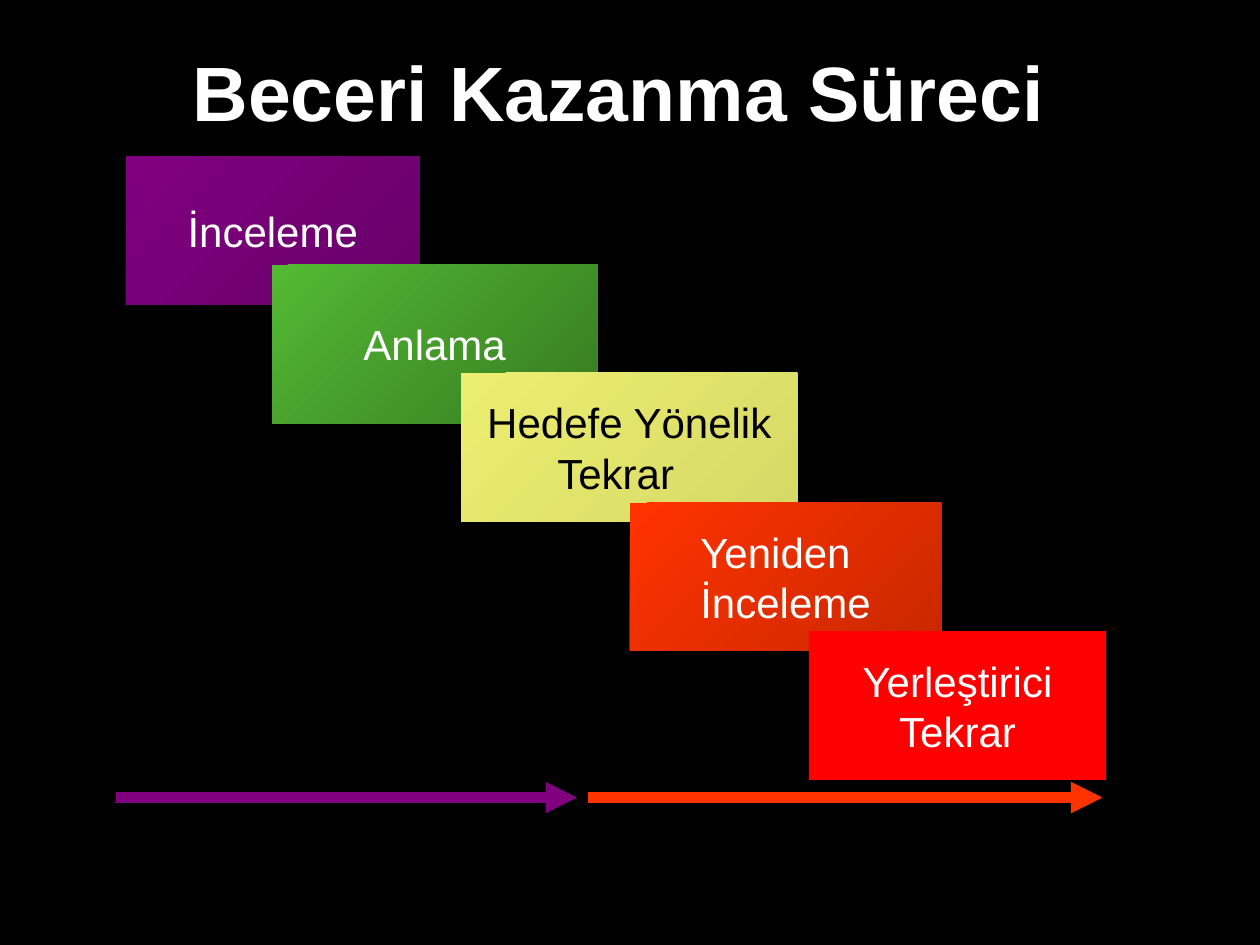
from lxml import etree
from pptx import Presentation
from pptx.dml.color import RGBColor
from pptx.enum.shapes import MSO_CONNECTOR as Connector, MSO_SHAPE as Shape
from pptx.enum.text import MSO_ANCHOR as Anchor, PP_ALIGN as Align
from pptx.oxml.ns import qn
from pptx.util import Inches, Pt


def color(hex_text):
    return RGBColor.from_string(hex_text)


def write_line(paragraph, text, size, hex_text, bold=False):
    for index, part in enumerate(text.split("\n")):
        if index:
            paragraph.add_line_break()
        run = paragraph.add_run()
        run.text = part
        run.font.name = "Arial"
        run.font.size = Pt(size)
        run.font.bold = bold
        run.font.color.rgb = color(hex_text)


presentation = Presentation()
presentation.slide_width = Inches(10)
presentation.slide_height = Inches(7.5)
column = presentation.slide_width / 100
row = presentation.slide_height / 100

slide = presentation.slides.add_slide(presentation.slide_layouts[6])
slide.background.fill.solid()
slide.background.fill.fore_color.rgb = color("000000")

title = slide.shapes.add_textbox(
    int(12.9 * column), int(1.73 * row), int(72.4 * column), int(15.73 * row)
)
title.text_frame.word_wrap = True
title.text_frame.vertical_anchor = Anchor.MIDDLE
title_paragraph = title.text_frame.paragraphs[0]
title_paragraph.alignment = Align.CENTER
write_line(title_paragraph, "Beceri Kazanma Süreci", 44, "FFFFFF", True)

steps = [
    (10, 16.53, 23.3, 15.73, ["800080", "690069"], "FFFFFF", Align.LEFT, [("İnceleme", 0)]),
    (21.6, 28, 25.8, 16.8, ["53B933", "377B22"], "FFFFFF", Align.LEFT, [("Anlama", 0)]),
    (36.6, 39.47, 26.7, 15.73, ["EBEE70", "D6D966"], "010000", Align.LEFT,
     [("Hedefe Yönelik", 0), ("Tekrar", 5.56)]),
    (50, 53.2, 24.7, 15.6, ["FF3300", "C92800"], "FFFFFF", Align.LEFT,
     [("Yeniden", 0), ("İnceleme", 0)]),
    (64.2, 66.8, 23.6, 15.73, ["FF0000"], "FFFFFF", Align.CENTER,
     [("Yerleştirici\nTekrar", 0)]),
]
for left, top, width, height, fills, text_color, alignment, lines in steps:
    box = slide.shapes.add_shape(
        Shape.RECTANGLE,
        int(left * column), int(top * row), int(width * column), int(height * row),
    )
    box.shadow.inherit = False
    box.line.fill.background()
    if len(fills) == 1:
        box.fill.solid()
        box.fill.fore_color.rgb = color(fills[0])
    else:
        box.fill.gradient()
        box.fill.gradient_angle = 315
        for stop, position, hex_text in zip(box.fill.gradient_stops, (0, 1), fills):
            stop.position = position
            stop.color.rgb = color(hex_text)
    frame = box.text_frame
    frame.word_wrap = False
    frame.vertical_anchor = Anchor.MIDDLE
    frame._txBody.bodyPr.set("anchorCtr", "1")
    for index, (text, indent) in enumerate(lines):
        paragraph = frame.add_paragraph() if index else frame.paragraphs[0]
        paragraph.alignment = alignment
        if indent:
            paragraph._p.get_or_add_pPr().set("marL", str(int(indent * column)))
        write_line(paragraph, text, 24, text_color)

for start, end, hex_text in [(9.2, 45.8, "800080"), (46.7, 87.5, "FF3300")]:
    arrow = slide.shapes.add_connector(
        Connector.STRAIGHT,
        int(start * column), int(84.4 * row), int(end * column), int(84.4 * row),
    )
    arrow.line.color.rgb = color(hex_text)
    arrow.line.width = Pt(6)
    etree.SubElement(arrow.line._get_or_add_ln(), qn("a:tailEnd"), type="triangle")
    etree.SubElement(arrow._element.spPr, qn("a:effectLst"))

presentation.save("out.pptx")
